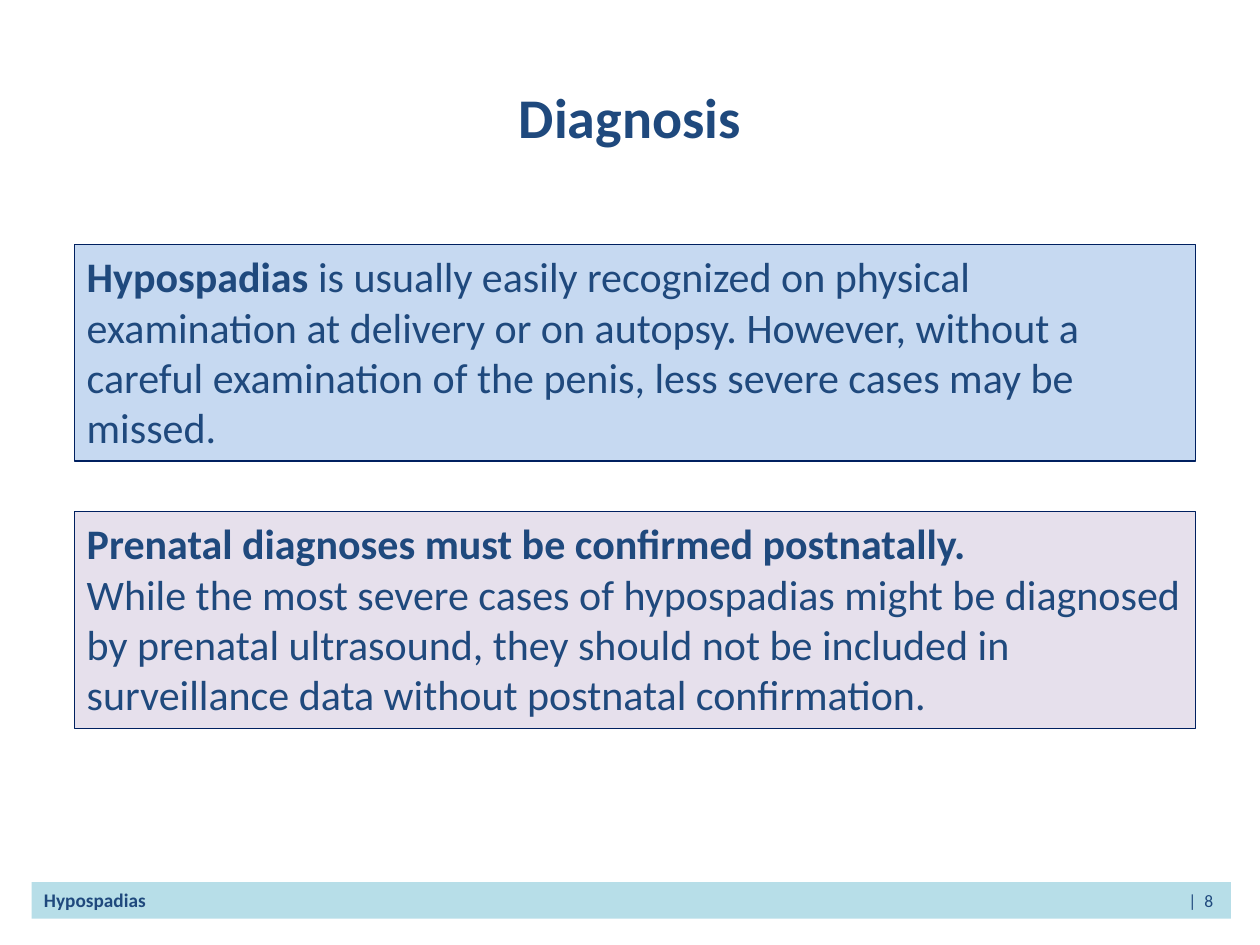
"""Build the Diagnosis slide with two statement boxes and a footer bar."""
from dataclasses import dataclass
from lxml import etree
from pptx import Presentation
from pptx.dml.color import RGBColor
from pptx.enum import shapes, text
from pptx.oxml.ns import qn
from pptx.util import Inches, Pt

HUES = {"ink": "1F497D", "edge": "002060", "blue": "C6D9F1",
        "mauve": "E6E0EC", "aqua": "B7DEE8"}


@dataclass
class Span:
    words: str
    size: float = 24
    bold: bool = False


@dataclass
class Panel:
    top: float
    fill: str
    paras: list[list[Span]]
    left: float = 0.59
    width: float = 8.9
    height: float = 1.72
    edge: str | None = "edge"


def hue(name: str) -> RGBColor:
    return RGBColor.from_string(HUES[name])


def style(obj, form: dict) -> None:
    for key, value in form.items():
        setattr(obj, key, value)


def write(para, spans: list[Span], align) -> None:
    para.alignment = align
    for span in spans:
        run = para.add_run()
        run.text = span.words
        style(run.font, {"name": "Calibri", "size": Pt(span.size), "bold": span.bold})
        run.font.color.rgb = hue("ink")


def draw(slide, panel: Panel):
    box = slide.shapes.add_shape(
        shapes.MSO_SHAPE.RECTANGLE, Inches(panel.left), Inches(panel.top),
        Inches(panel.width), Inches(panel.height))
    box.shadow.inherit = False
    box.fill.solid()
    box.fill.fore_color.rgb = hue(panel.fill)
    if panel.edge:
        box.line.color.rgb = hue(panel.edge)
        box.line.width = Pt(0.75)
    else:
        box.line.fill.background()
    frame = box.text_frame
    style(frame, {"word_wrap": True, "vertical_anchor": text.MSO_ANCHOR.TOP,
                  "auto_size": text.MSO_AUTO_SIZE.SHAPE_TO_FIT_TEXT})
    for row, spans in enumerate(panel.paras):
        para = frame.add_paragraph() if row else frame.paragraphs[0]
        write(para, spans, text.PP_ALIGN.LEFT)
    return box


def tab(para, pos: float) -> None:
    stops = etree.SubElement(para._p.get_or_add_pPr(), qn("a:tabLst"))
    etree.SubElement(stops, qn("a:tab"), pos=str(Inches(pos)), algn="r")


PANELS = [
    Panel(1.94, "blue", [[
        Span("Hypospadias", bold=True),
        Span(" is usually easily recognized on physical examination at delivery "
             "or on autopsy. However, without a careful examination of the penis, "
             "less severe cases may be missed.")]]),
    Panel(4.06, "mauve", [
        [Span("Prenatal diagnoses must be confirmed postnatally.", bold=True)],
        [Span("While the most severe cases of hypospadias might be diagnosed by "
              "prenatal ultrasound, they should not be included in surveillance "
              "data without postnatal confirmation.")]]),
]
FOOTER = Panel(7, "aqua", [[Span("Hypospadias", 11, True), Span("\t|  8", 10)]],
               left=0.25, width=9.52, height=0.29, edge=None)


def main() -> None:
    deck = Presentation()
    style(deck, {"slide_width": Inches(10), "slide_height": Inches(7.5)})
    slide = deck.slides.add_slide(deck.slide_layouts[5])
    title = slide.shapes.title
    style(title, {"left": Inches(0.5), "top": Inches(0.3),
                  "width": Inches(9), "height": Inches(1.25)})
    title.text_frame.vertical_anchor = text.MSO_ANCHOR.MIDDLE
    write(title.text_frame.paragraphs[0], [Span("Diagnosis", 32, True)],
          text.PP_ALIGN.CENTER)
    for panel in PANELS:
        draw(slide, panel)
    bar = draw(slide, FOOTER)
    tab(bar.text_frame.paragraphs[0], 9.28)
    deck.save("out.pptx")


if __name__ == "__main__":
    main()
